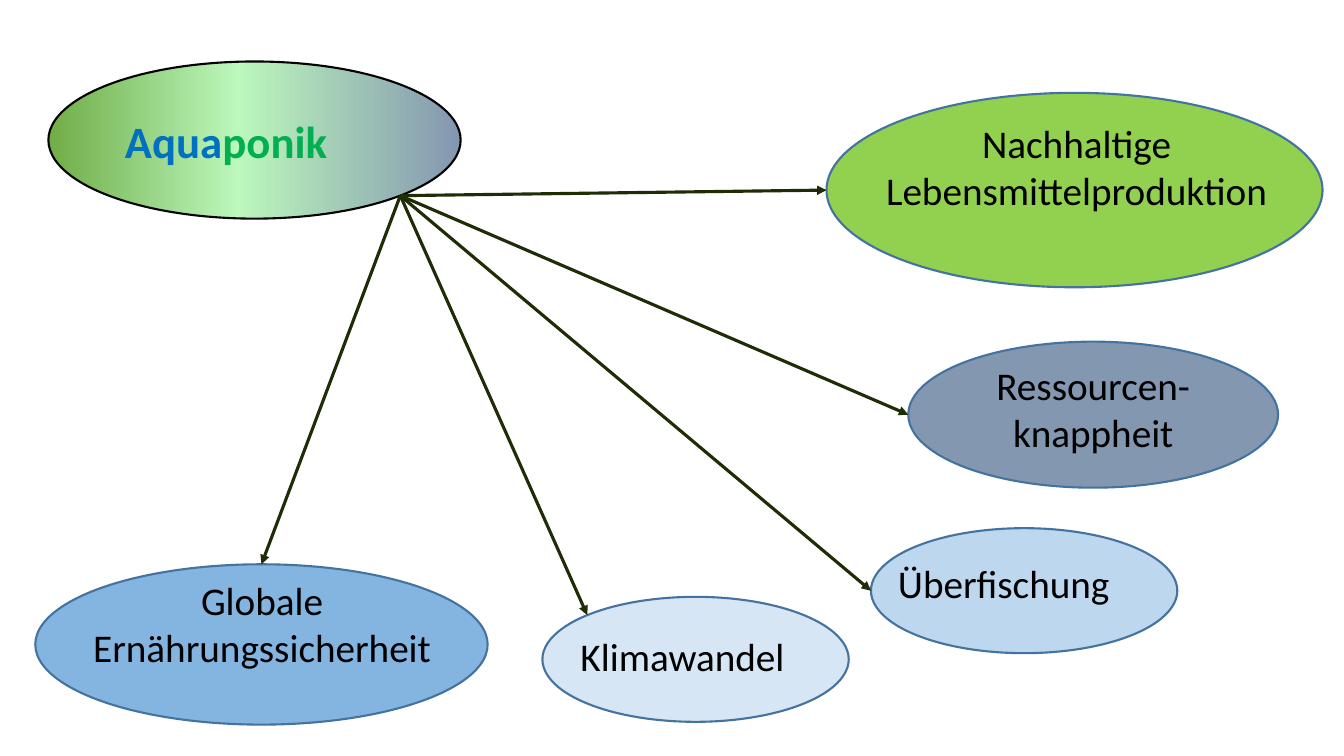
from copy import deepcopy
from math import cos, radians, sin

from lxml.etree import SubElement
from pptx import Presentation
from pptx.dml.color import RGBColor
from pptx.enum.shapes import MSO_CONNECTOR, MSO_SHAPE
from pptx.enum.text import MSO_AUTO_SIZE, PP_ALIGN
from pptx.oxml.ns import qn
from pptx.util import Cm, Pt

BLACK = RGBColor(0x00, 0x00, 0x00)
WATER = RGBColor(0x00, 0x70, 0xC0)
PLANT = RGBColor(0x00, 0xB0, 0x50)
OUTLINE = RGBColor(0x43, 0x73, 0x9E)
ARROW = RGBColor(0x1E, 0x2D, 0x05)
LIME = RGBColor(0x92, 0xD0, 0x50)
SLATE = RGBColor(0x84, 0x97, 0xB0)
SKY = RGBColor(0xBD, 0xD7, 0xEE)
PALE = RGBColor(0xD6, 0xE6, 0xF4)
BLUE = RGBColor(0x84, 0xB4, 0xE0)
GRADIENT = [(0, RGBColor(0x70, 0xAD, 0x47)),
            (0.46, RGBColor(0xBC, 0xF7, 0xBC)),
            (1, SLATE)]

# Boxes in cm: left, top, width, height; label boxes are relative to the ellipse.
# Rim angles run clockwise from the right-hand side.
HUB = (1.22, 1.55, 10.39, 3.96)
HUB_LABEL = (1.68, 1.19, 7.01, 1.63)
HUB_ANGLE = 45
LEFT, TOP_LEFT, TOP = 180, 225, 270
TOPICS = [
    # lines, ellipse box, label box, fill, alignment, rim angle of the arrow
    (["Klimawandel"], (13.67, 15.04, 7.72, 3.15),
     (0.71, 0.76, 7.01, 1.45), PALE, PP_ALIGN.LEFT, TOP_LEFT),
    (["Ressourcen-knappheit"], (22.89, 8.61, 9.32, 3.68),
     (1.27, 0.38, 6.78, 2.64), SLATE, PP_ALIGN.CENTER, LEFT),
    (["Globale", "Ernährungssicherheit"], (0.89, 14.22, 11.4, 4.04),
     (-0.76, 0.18, 12.95, 2.64), BLUE, PP_ALIGN.CENTER, TOP),
    (["Überfischung"], (21.95, 13.31, 7.72, 3.15),
     (0.43, 0.66, 7.01, 1.45), SKY, PP_ALIGN.LEFT, LEFT),
    (["Nachhaltige Lebensmittelproduktion"], (20.83, 2.34, 12.5, 4.9),
     (0.28, 0.53, 12.04, 4.01), LIME, PP_ALIGN.CENTER, LEFT),
]


def add_ellipse(slide, box, line_color):
    sp = slide.shapes.add_shape(MSO_SHAPE.OVAL, *map(Cm, box))
    sp.shadow.inherit = False
    sp.line.color.rgb = line_color
    sp.line.width = Pt(1.5)
    return sp


def add_label(slide, box, label_box):
    """Add an empty text box placed relative to the ellipse box."""
    dx, dy, width, height = label_box
    sp = slide.shapes.add_textbox(Cm(box[0] + dx), Cm(box[1] + dy),
                                  Cm(width), Cm(height))
    tf = sp.text_frame
    tf.word_wrap = True
    tf.auto_size = MSO_AUTO_SIZE.SHAPE_TO_FIT_TEXT
    return tf


def format_run(r, size, color, bold=False):
    r.font.name = "Calibri"
    r.font.size = Pt(size)
    r.font.color.rgb = color
    r.font.bold = bold


def add_hub(slide, box):
    sp = add_ellipse(slide, box, BLACK)
    # Three-stop gradient
    sp.fill.gradient()
    sp.fill.gradient_angle = 0
    stop_list = sp._element.spPr.find(qn("a:gradFill")).find(qn("a:gsLst"))
    stop_list.append(deepcopy(stop_list[0]))
    for stop, (position, color) in zip(sp.fill.gradient_stops, GRADIENT):
        stop.position = position
        stop.color.rgb = color
    # Two-coloured name
    p = add_label(slide, box, HUB_LABEL).paragraphs[0]
    for text, color in (("Aqua", WATER), ("ponik", PLANT)):
        r = p.add_run()
        r.text = text
        format_run(r, 32, color, bold=True)


def add_topic(slide, box, lines, label_box, fill, alignment):
    sp = add_ellipse(slide, box, OUTLINE)
    sp.fill.solid()
    sp.fill.fore_color.rgb = fill
    tf = add_label(slide, box, label_box)
    tf.text = "\n".join(lines)
    for p in tf.paragraphs:
        p.alignment = alignment
        format_run(p.runs[0], 28, BLACK)


def rim_point(box, angle):
    """Return the point on the ellipse in the box at the given angle."""
    left, top, width, height = box
    return (Cm(left + width / 2 * (1 + cos(radians(angle)))),
            Cm(top + height / 2 * (1 + sin(radians(angle)))))


def add_arrow(slide, start, end):
    cxn = slide.shapes.add_connector(MSO_CONNECTOR.STRAIGHT, *start, *end)
    cxn.line.color.rgb = ARROW
    cxn.line.width = Pt(2.25)
    SubElement(cxn.line._get_or_add_ln(), qn("a:tailEnd"), type="triangle")
    SubElement(cxn._element.spPr, qn("a:effectLst"))


def main():
    prs = Presentation()
    prs.slide_width, prs.slide_height = Cm(33.87), Cm(19.05)
    slide = prs.slides.add_slide(prs.slide_layouts[6])

    # Hub, topics around it, and an arrow to each topic
    add_hub(slide, HUB)
    for lines, box, label_box, fill, alignment, angle in TOPICS:
        add_topic(slide, box, lines, label_box, fill, alignment)
        add_arrow(slide, rim_point(HUB, HUB_ANGLE), rim_point(box, angle))

    prs.save("out.pptx")


if __name__ == "__main__":
    main()
